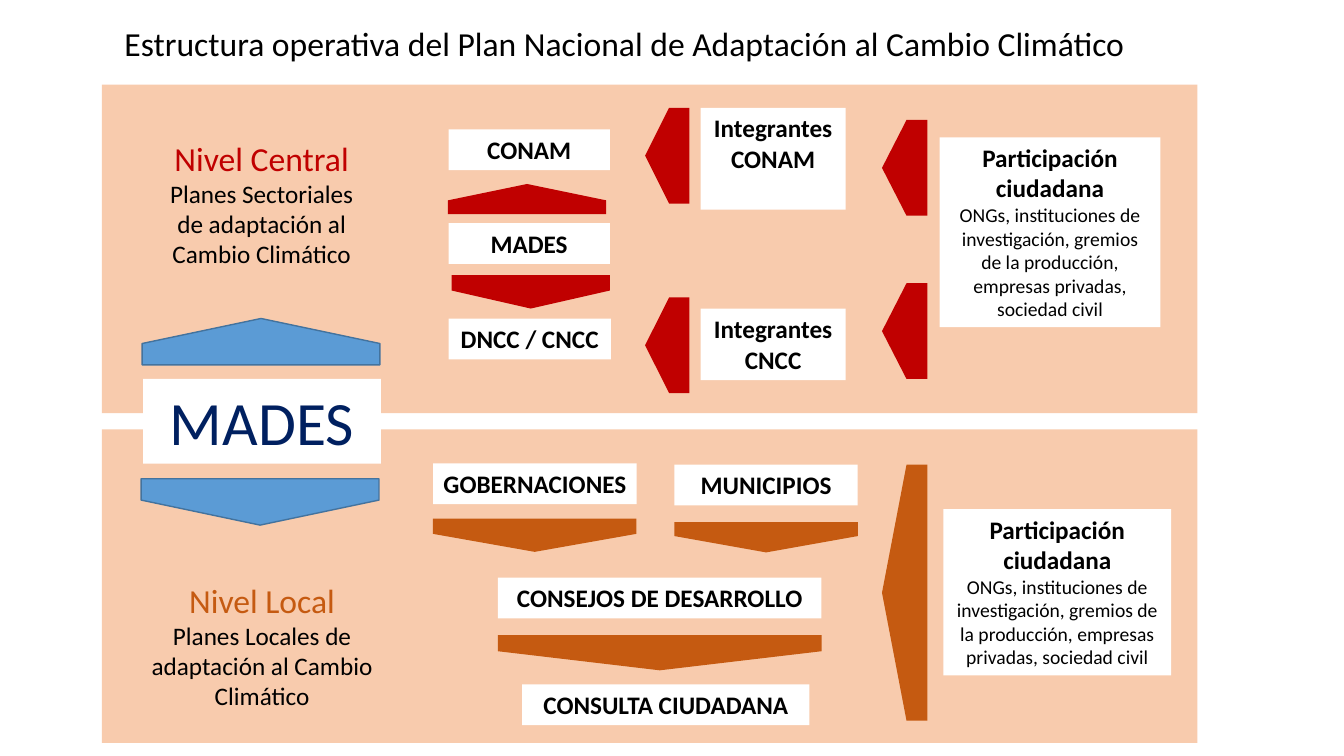
import pptx
import pptx.util
import pptx.dml.color
import pptx.enum.shapes
import pptx.enum.text
from dataclasses import dataclass

Pt = pptx.util.Pt
SHAPES = pptx.enum.shapes.MSO_SHAPE
ALIGN = pptx.enum.text.PP_ALIGN


@dataclass(frozen=True)
class Theme:
    font: str = "Calibri"
    black: str = "000000"
    white: str = "FFFFFF"
    peach: str = "F8CBAD"
    red: str = "C00000"
    orange: str = "C55A11"
    blue: str = "5B9BD5"
    blue_edge: str = "43739E"
    navy: str = "002060"
    huge: int = 44
    heading: int = 24
    label: int = 18
    detail: int = 14


theme = Theme()


def add_block(kind, left, top, width, height, fill, edge=None):
    shape = page.shapes.add_shape(kind, Pt(left), Pt(top), Pt(width), Pt(height))
    shape.shadow.inherit = False
    shape.fill.solid()
    shape.fill.fore_color.rgb = pptx.dml.color.RGBColor.from_string(fill)
    if edge:
        shape.line.color.rgb = pptx.dml.color.RGBColor.from_string(edge)
        shape.line.width = Pt(1)
    else:
        shape.line.fill.background()
    return shape


def write(shape, lines, align=ALIGN.CENTER, wrap=True):
    """Each line is (text, size, colour, bold)."""
    frame = shape.text_frame
    frame.word_wrap = wrap
    frame.auto_size = pptx.enum.text.MSO_AUTO_SIZE.NONE
    frame.vertical_anchor = pptx.enum.text.MSO_ANCHOR.TOP
    for index, (text, size, color, bold) in enumerate(lines):
        para = frame.paragraphs[0] if index == 0 else frame.add_paragraph()
        para.alignment = align
        span = para.add_run()
        span.text = text
        span.font.name = theme.font
        span.font.size = Pt(size)
        span.font.bold = bold
        span.font.color.rgb = pptx.dml.color.RGBColor.from_string(color)


deck = pptx.Presentation()
deck.slide_width, deck.slide_height = Pt(960), Pt(540)
page = deck.slides.add_slide(deck.slide_layouts[5])

# Title
title = page.shapes.title
title.left, title.top, title.width, title.height = Pt(76.3), Pt(13), Pt(853.2), Pt(65.5)
write(title, [("Estructura operativa del Plan Nacional de Adaptación al Cambio Climático",
               theme.heading, theme.black, False)], ALIGN.LEFT)
title.text_frame.margin_left = Pt(12.6)

# Panels for the local and central levels
for top, height in [(306.7, 223.9), (60.5, 234.7)]:
    add_block(SHAPES.RECTANGLE, 72.7, top, 782.6, height, theme.peach)

# Ministry box that bridges both panels
ministry = add_block(SHAPES.RECTANGLE, 102.2, 270.7, 169.9, 60.5, theme.white)
write(ministry, [("MADES", theme.huge, theme.navy, False)])

# Level captions
captions = [
    (110.2, 95, 153.4, "Nivel Central", theme.red,
     "Planes Sectoriales de adaptación al Cambio Climático"),
    (100.1, 410.4, 174.2, "Nivel Local", theme.orange,
     "Planes Locales de adaptación al Cambio Climático"),
]
for left, top, width, level, color, plans in captions:
    box = page.shapes.add_textbox(Pt(left), Pt(top), Pt(width), Pt(101.5))
    write(box, [(level, theme.heading, color, False),
                (plans, theme.label, theme.black, False)])

# One-line institution labels
institutions = [
    (320.4, 92.4, 115.2, "CONAM"),
    (320.4, 159.4, 115.2, "MADES"),
    (320.4, 227.6, 115.9, "DNCC / CNCC"),
    (309.4, 331, 145.4, "GOBERNACIONES"),
    (481.7, 331.9, 131, "MUNICIPIOS"),
    (355.7, 412.6, 231.1, "CONSEJOS DE DESARROLLO"),
    (373, 488.9, 205.2, "CONSULTA CIUDADANA"),
]
for left, top, width, name in institutions:
    box = add_block(SHAPES.RECTANGLE, left, top, width, 29.1, theme.white)
    write(box, [(name, theme.label, theme.black, True)], wrap=False)

# Members of each council
for top, height, council in [(77, 72.7, "CONAM"), (220.5, 51.1, "CNCC")]:
    box = add_block(SHAPES.RECTANGLE, 500.4, top, 103.7, height, theme.white)
    write(box, [("Integrantes " + council, theme.label, theme.black, True)])

# Citizen participation
for left, top, width, height in [(671.2, 98.2, 157.7, 135.4), (673.9, 363.6, 162.7, 118.8)]:
    box = add_block(SHAPES.RECTANGLE, left, top, width, height, theme.white)
    write(box, [("Participación ciudadana", theme.label, theme.black, True),
                ("ONGs, instituciones de investigación, gremios de la producción, "
                 "empresas privadas, sociedad civil", theme.detail, theme.black, False)])

# Arrows: visible left, top, width, height, then rotation and colours
UP, DOWN, LEFT = 270, 90, 180
arrows = [
    (101.5, 227.5, 169.9, 33.1, UP, theme.blue, theme.blue_edge),
    (100.8, 342, 169.9, 33.1, DOWN, theme.blue, theme.blue_edge),
    (320, 131.4, 113, 21.6, UP, theme.red, None),
    (322.6, 196.6, 113, 23.8, DOWN, theme.red, None),
    (460.8, 77, 31.7, 68.4, LEFT, theme.red, None),
    (460.8, 212.4, 31.7, 68.4, LEFT, theme.red, None),
    (630, 85.7, 32.4, 68.4, LEFT, theme.red, None),
    (630, 202.3, 32.4, 68.4, LEFT, theme.red, None),
    (630, 331.9, 32.4, 182.9, LEFT, theme.orange, None),
    (309.2, 370.4, 145.4, 23.8, DOWN, theme.orange, None),
    (481.7, 373, 131, 21.6, DOWN, theme.orange, None),
    (355.7, 453.6, 231.1, 25.2, DOWN, theme.orange, None),
]
for left, top, width, height, turn, fill, edge in arrows:
    if turn != LEFT:  # a quarter turn swaps the sides around the same centre
        left, top = left + (width - height) / 2, top + (height - width) / 2
        width, height = height, width
    arrow = add_block(SHAPES.PENTAGON, left, top, width, height, fill, edge)
    arrow.adjustments[0] = 0.54
    arrow.rotation = turn

deck.save("out.pptx")
